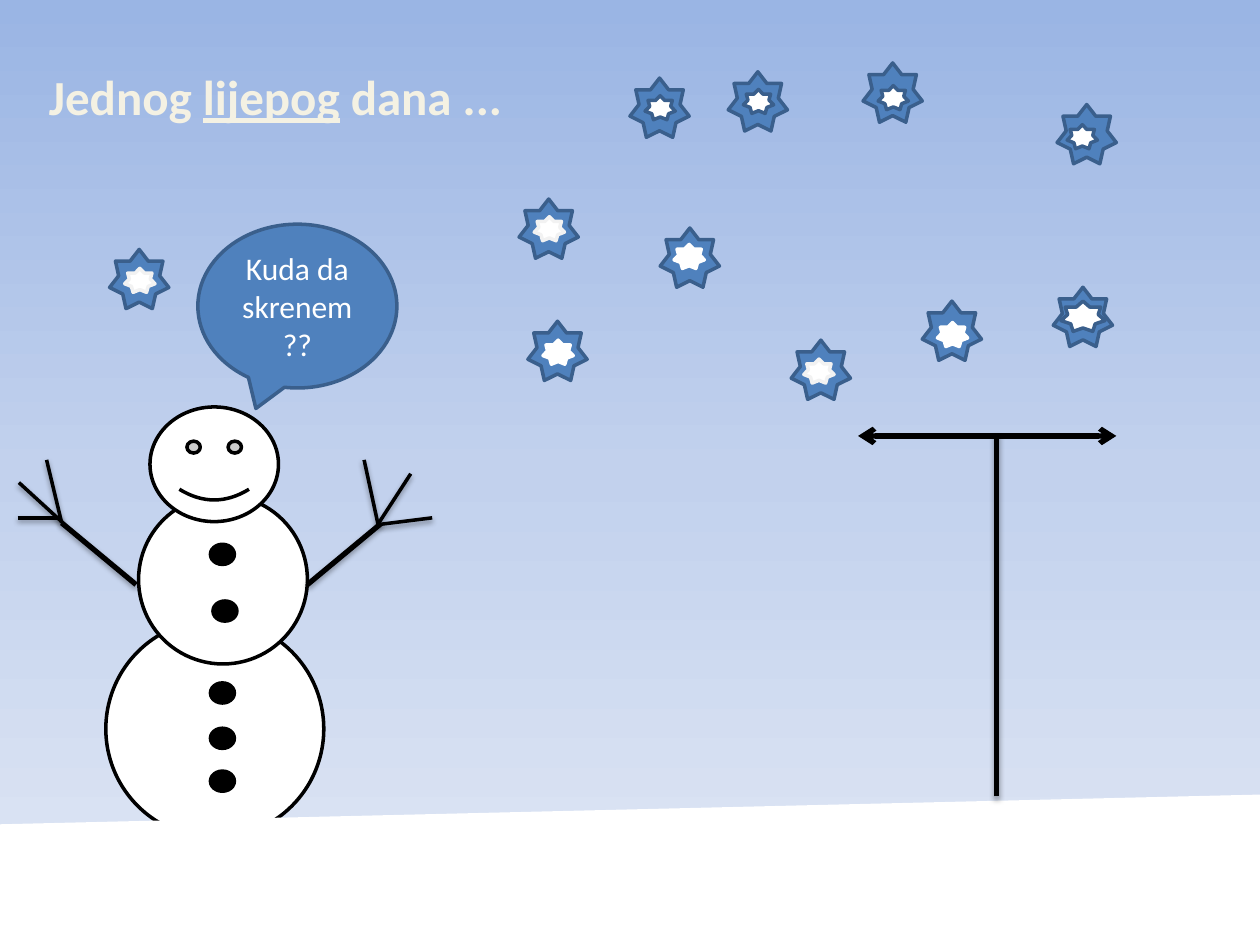
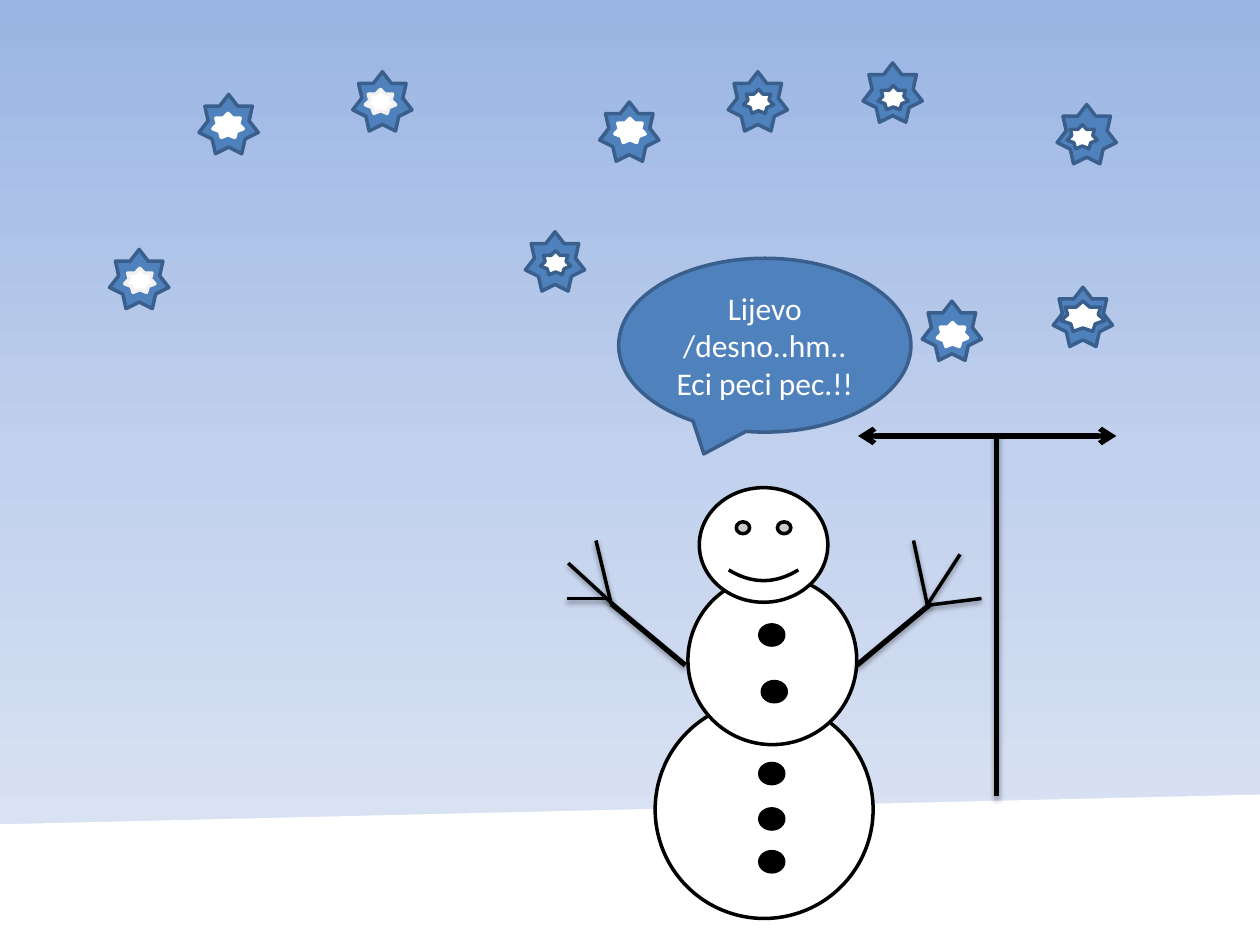
from copy import deepcopy
from dataclasses import dataclass

from lxml.etree import SubElement
from pptx import Presentation
from pptx.dml.color import RGBColor
from pptx.enum.shapes import MSO_CONNECTOR, MSO_SHAPE
from pptx.enum.text import MSO_ANCHOR, PP_ALIGN
from pptx.oxml.ns import qn
from pptx.shapes.autoshape import Shape
from pptx.shapes.shapetree import GroupShapes, SlideShapes
from pptx.slide import Slide, SlideLayout
from pptx.util import Inches, Pt

BLACK = RGBColor(0x00, 0x00, 0x00)
WHITE = RGBColor(0xFF, 0xFF, 0xFF)
FROST = RGBColor(0xF2, 0xF2, 0xF2)
CREAM = RGBColor(0xF4, 0xF1, 0xE3)
BLUE = RGBColor(0x4F, 0x81, 0xBD)
DARK_BLUE = RGBColor(0x3A, 0x5F, 0x8C)
SKY = [
    (0.0, RGBColor(0x9A, 0xB5, 0xE4)),
    (0.5, RGBColor(0xC2, 0xD1, 0xED)),
    (1.0, RGBColor(0xE1, 0xE8, 0xF5)),
]

TITLE_FORMAT = {"name": "Calibri", "size": Pt(28), "bold": True}
SPEECH_FORMAT = {"name": "Calibri", "size": Pt(18)}


@dataclass(frozen=True)
class Part:
    kind: MSO_SHAPE
    left: float
    top: float
    width: float
    height: float
    fill: RGBColor = WHITE
    edge: RGBColor = BLACK


@dataclass(frozen=True)
class Stroke:
    start: tuple[float, float]
    end: tuple[float, float]
    weight: int = 2
    shadow_opacity: int = 38
    shadow_distance: float = 1.6


@dataclass(frozen=True)
class Snowflake:
    left: float
    top: float
    core_left: float
    core_top: float
    core_edge: RGBColor
    core_width: float = 0.24
    core_height: float = 0.19


def thick_stroke(start: tuple[float, float], end: tuple[float, float]) -> Stroke:
    return Stroke(start, end, 3, 35, 1.8)


BUTTONS = [(1.67, 6.12), (1.67, 5.78), (1.67, 5.42), (1.69, 4.77), (1.67, 4.32)]
BODY = [
    Part(MSO_SHAPE.OVAL, 0.84, 4.92, 1.73, 1.73),
    Part(MSO_SHAPE.OVAL, 1.1, 3.93, 1.34, 1.34),
    Part(MSO_SHAPE.SMILEY_FACE, 1.19, 3.23, 1.02, 0.91),
    *(Part(MSO_SHAPE.OVAL, left, top, 0.19, 0.16, BLACK) for left, top in BUTTONS),
]
ARMS = [
    thick_stroke((1.08, 4.64), (0.49, 4.15)),
    thick_stroke((2.44, 4.64), (3.03, 4.15)),
    Stroke((3.26, 3.76), (3, 4.16)),
    Stroke((3.03, 4.16), (3.43, 4.11)),
    Stroke((2.89, 3.65), (3, 4.16)),
    Stroke((0.37, 3.65), (0.49, 4.15)),
    Stroke((0.15, 3.83), (0.5, 4.15)),
    Stroke((0.14, 4.11), (0.49, 4.11)),
]
GROUND = Part(MSO_SHAPE.FLOWCHART_MANUAL_INPUT, 0, 6.32, 10, 1.18, WHITE, WHITE)
SIGN_POST = thick_stroke((7.91, 6.32), (7.91, 3.44))
SIGN_ARROW = Stroke((6.81, 3.46), (8.86, 3.46), 3, 0)

COMMON_SNOW = [
    Snowflake(5.78, 0.57, 5.9, 0.71, DARK_BLUE),
    Snowflake(0.87, 1.98, 0.99, 2.13, FROST),
    Snowflake(7.32, 2.39, 7.44, 2.56, WHITE),
    Snowflake(8.39, 0.83, 8.47, 0.99, DARK_BLUE),
    Snowflake(6.85, 0.5, 6.97, 0.68, DARK_BLUE),
    Snowflake(8.36, 2.28, 8.42, 2.39, DARK_BLUE, 0.35, 0.24),
]
FIRST_SNOW = [
    Snowflake(5.24, 1.81, 5.35, 1.94, WHITE),
    Snowflake(6.28, 2.7, 6.38, 2.85, FROST),
    Snowflake(4.19, 2.55, 4.31, 2.7, WHITE),
    Snowflake(5, 0.62, 5.12, 0.76, DARK_BLUE),
    Snowflake(4.12, 1.58, 4.24, 1.72, FROST),
]
SECOND_SNOW = [
    Snowflake(1.58, 0.75, 1.69, 0.9, WHITE),
    Snowflake(2.8, 0.57, 2.9, 0.71, FROST),
    Snowflake(4.76, 0.81, 4.88, 0.94, WHITE),
    Snowflake(4.17, 1.84, 4.29, 1.99, DARK_BLUE),
]


def paint_sky(layout: SlideLayout) -> None:
    fill = layout.background.fill
    fill.gradient()
    fill.gradient_angle = 270
    stop_list = layout.element.find(".//" + qn("a:gsLst"))
    stop_list.append(deepcopy(stop_list[0]))
    for stop, (position, color) in zip(fill.gradient_stops, SKY):
        stop.position = position
        stop.color.rgb = color


def draw_part(
    shapes: SlideShapes | GroupShapes, part: Part, right: float = 0, down: float = 0
) -> Shape:
    shape = shapes.add_shape(
        part.kind,
        Inches(part.left + right),
        Inches(part.top + down),
        Inches(part.width),
        Inches(part.height),
    )
    shape.shadow.inherit = False
    shape.fill.solid()
    shape.fill.fore_color.rgb = part.fill
    shape.line.color.rgb = part.edge
    shape.line.width = Pt(2)
    return shape


def draw_stroke(
    shapes: SlideShapes | GroupShapes,
    stroke: Stroke,
    right: float = 0,
    down: float = 0,
    arrows: bool = False,
) -> None:
    (x1, y1), (x2, y2) = stroke.start, stroke.end
    connector = shapes.add_connector(
        MSO_CONNECTOR.STRAIGHT,
        Inches(x1 + right),
        Inches(y1 + down),
        Inches(x2 + right),
        Inches(y2 + down),
    )
    connector.line.color.rgb = BLACK
    connector.line.width = Pt(stroke.weight)
    properties = connector.element.spPr
    if arrows:
        for end in ("a:headEnd", "a:tailEnd"):
            SubElement(properties.find(qn("a:ln")), qn(end), type="arrow")
    effects = SubElement(properties, qn("a:effectLst"))
    if stroke.shadow_opacity:
        shadow = SubElement(
            effects,
            qn("a:outerShdw"),
            blurRad=str(Pt(3.1)),
            dist=str(Pt(stroke.shadow_distance)),
            dir="5400000",
            rotWithShape="0",
        )
        color = SubElement(shadow, qn("a:srgbClr"), val=str(BLACK))
        SubElement(color, qn("a:alpha"), val=str(stroke.shadow_opacity * 1000))


def draw_snowman(slide: Slide, right: float = 0, down: float = 0) -> None:
    shapes = slide.shapes.add_group_shape().shapes
    for part in BODY:
        draw_part(shapes, part, right, down)
    for arm in ARMS:
        draw_stroke(shapes, arm, right, down)


def draw_landscape(slide: Slide) -> None:
    draw_part(slide.shapes, GROUND)
    draw_stroke(slide.shapes, SIGN_POST)
    draw_stroke(slide.shapes, SIGN_ARROW, arrows=True)


def draw_snow(slide: Slide, flakes: list[Snowflake]) -> None:
    star = MSO_SHAPE.STAR_7_POINT
    for flake in flakes:
        draw_part(
            slide.shapes,
            Part(star, flake.left, flake.top, 0.47, 0.47, BLUE, DARK_BLUE),
        )
        draw_part(
            slide.shapes,
            Part(
                star,
                flake.core_left,
                flake.core_top,
                flake.core_width,
                flake.core_height,
                WHITE,
                flake.core_edge,
            ),
        )


def add_span(
    para, text: str, formats: dict, color: RGBColor, underline: bool = False
) -> None:
    span = para.add_run()
    span.text = text
    for name, value in {**formats, "underline": underline}.items():
        setattr(span.font, name, value)
    span.font.color.rgb = color


def draw_speech(
    slide: Slide, left: float, top: float, width: float, height: float, text: str
) -> None:
    kind = MSO_SHAPE.OVAL_CALLOUT
    box = draw_part(
        slide.shapes, Part(kind, left, top, width, height, BLUE, DARK_BLUE)
    )
    frame = box.text_frame
    frame.word_wrap = True
    frame.vertical_anchor = MSO_ANCHOR.MIDDLE
    para = frame.paragraphs[0]
    para.alignment = PP_ALIGN.CENTER
    add_span(para, text, SPEECH_FORMAT, WHITE)


def draw_title(slide: Slide) -> None:
    box = slide.shapes.add_textbox(
        Inches(0.29), Inches(0.48), Inches(3.86), Inches(0.57)
    )
    box.text_frame.word_wrap = True
    para = box.text_frame.paragraphs[0]
    for text, underline in [("Jednog ", False), ("lijepog", True), (" dana ...", False)]:
        add_span(para, text, TITLE_FORMAT, CREAM, underline)


def build_arrival(page: Slide) -> None:
    draw_title(page)
    draw_snowman(page)
    draw_landscape(page)
    draw_speech(page, 1.57, 1.78, 1.58, 1.3, "Kuda da skrenem??")
    draw_snow(page, COMMON_SNOW + FIRST_SNOW)


def build_choice(page: Slide) -> None:
    draw_landscape(page)
    draw_snow(page, COMMON_SNOW + SECOND_SNOW)
    draw_speech(page, 4.91, 2.05, 2.32, 1.38, "Lijevo /desno..hm.. Eci peci pec.!!")
    draw_snowman(page, right=4.36, down=0.64)


def main() -> None:
    deck = Presentation()
    deck.slide_width = Inches(10)
    deck.slide_height = Inches(7.5)
    blank = deck.slide_layouts[6]
    paint_sky(blank)
    for build in (build_arrival, build_choice):
        build(deck.slides.add_slide(blank))
    deck.save("out.pptx")


if __name__ == "__main__":
    main()
